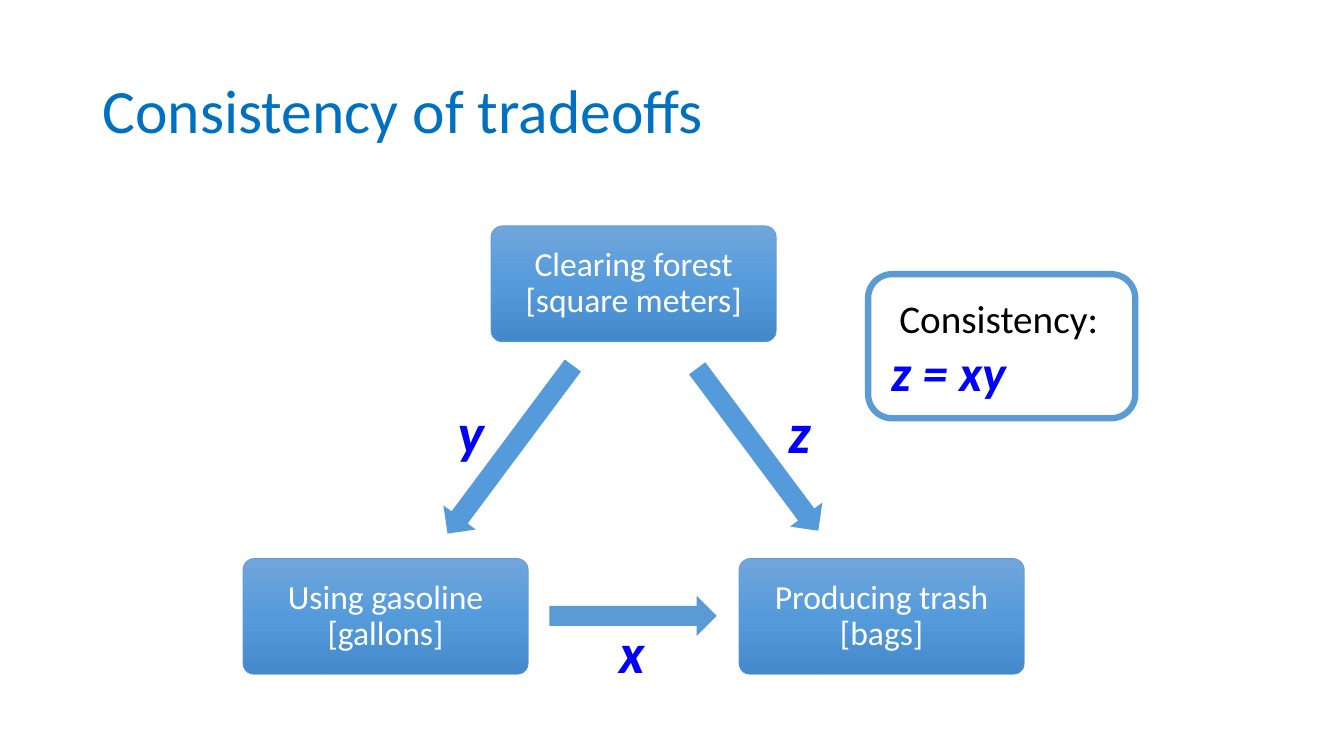
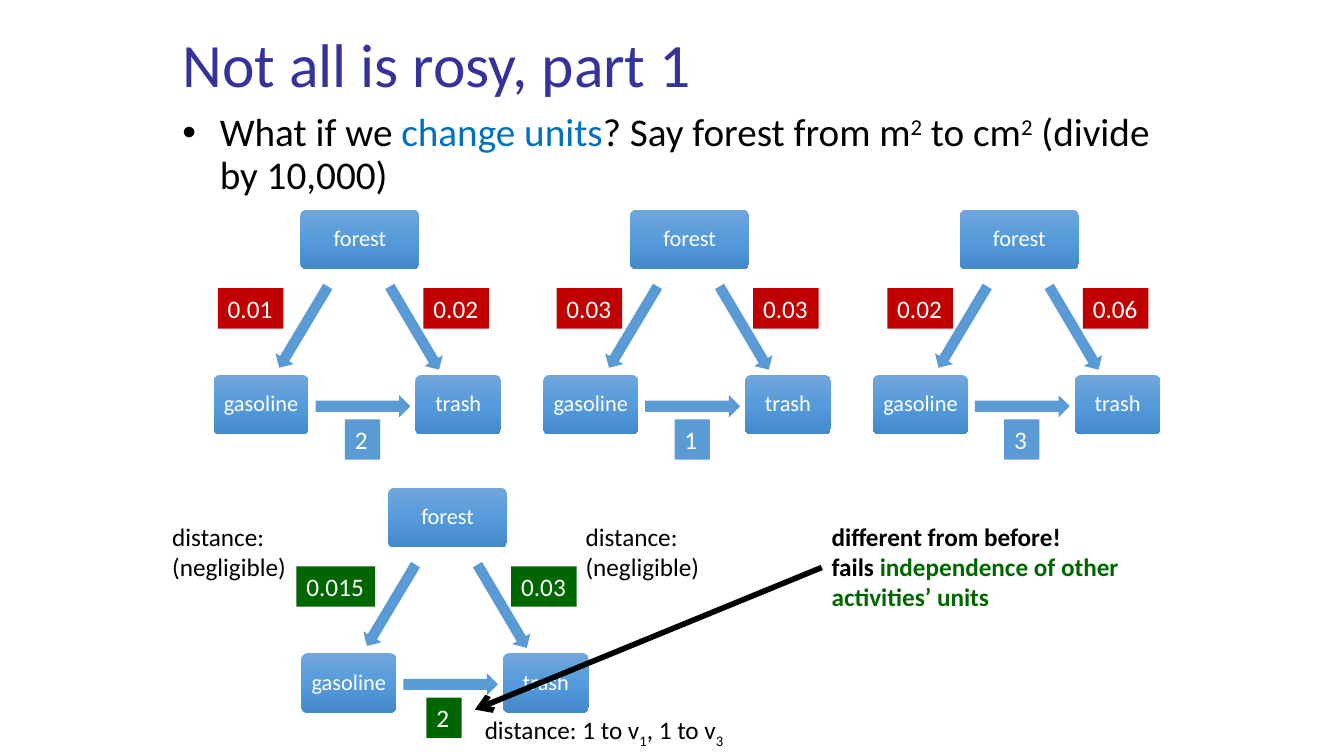
from lxml import etree
from pptx import Presentation
from pptx.dml.color import RGBColor
from pptx.enum.shapes import MSO_CONNECTOR, MSO_SHAPE
from pptx.enum.text import MSO_ANCHOR, MSO_AUTO_SIZE, PP_ALIGN
from pptx.oxml import parse_xml
from pptx.oxml.ns import nsdecls, qn
from pptx.util import Inches, Pt

FONT = "Calibri"
COLORS = {
    "white": "FFFFFF", "black": "000000", "accent": "5B9BD5",
    "title": "0070C0", "indigo": "333399", "variable": "0000FF",
    "red": "C00000", "green": "006600", "diagonal": "559BDB",
}
NODE_STOPS = [(0, "71A6DB"), (50, "559BDB"), (100, "448ACA")]
ACTIVITIES = ("forest", "gasoline", "trash")

# Triangle geometry, relative to its top left corner.
# Nodes and labels: left, top, width, height; arrows add an angle.
LARGE = {
    "size": 24, "inset": 0.15, "line": 0.5, "diagonal": "diagonal",
    "nodes": {"forest": (2.46, 0, 2.83, 1.15),
              "gasoline": (0, 3.3, 2.83, 1.15),
              "trash": (4.92, 3.3, 2.83, 1.15)},
    "arrows": {"y": (1.61, 2.02, 2.08, 0.4, 126.7),
               "z": (4.1, 2.02, 2.01, 0.4, 53.3),
               "x": (3.04, 3.67, 1.66, 0.4, 0)},
    "labels": {"y": (2.03, 1.65, 0.46, 0.77),
               "z": (5.31, 1.65, 0.42, 0.77),
               "x": (3.63, 3.84, 0.46, 0.77)},
}
SMALL = {
    "size": 16, "inset": 0.08, "line": 0, "diagonal": "accent",
    "nodes": {"forest": (0.86, 0, 1.18, 0.59),
              "gasoline": (0, 1.64, 0.94, 0.59),
              "trash": (2, 1.64, 0.85, 0.59)},
    "arrows": {"y": (0.42, 1.06, 0.94, 0.21, 120.9),
               "z": (1.51, 1.07, 0.96, 0.21, 59.4),
               "x": (1.01, 1.84, 0.94, 0.22, 0)},
}


def rgb(name):
    return RGBColor.from_string(COLORS[name])


def inches(box):
    return [Inches(v) for v in box]


def shift(box, x, y):
    return (x + box[0], y + box[1], *box[2:])


def add_run(p, text, size, color, bold=False, italic=False, baseline=0):
    r = p.add_run()
    r.text = text
    r.font.name, r.font.size = FONT, Pt(size)
    r.font.bold, r.font.italic = bold, italic
    r.font.color.rgb = rgb(color)
    if baseline:
        r.font._element.set("baseline", str(baseline * 1000))


def write(tf, paras, size, color, **style):
    """Each paragraph is a list of (text, changes of style) runs."""
    for i, runs in enumerate(paras):
        p = tf.paragraphs[0] if i == 0 else tf.add_paragraph()
        for text, changes in runs:
            add_run(p, text, **{"size": size, "color": color, **style, **changes})


def add_text(s, box, paras, size, color="black", fill=None, wrap=False,
             fit=True, inset=None, **style):
    sp = s.shapes.add_textbox(*inches(box))
    tf = sp.text_frame
    tf.word_wrap = wrap
    tf.auto_size = MSO_AUTO_SIZE.SHAPE_TO_FIT_TEXT if fit else MSO_AUTO_SIZE.NONE
    if inset is not None:
        set_insets(tf, inset)
    if fill:
        sp.fill.solid()
        sp.fill.fore_color.rgb = rgb(fill)
    write(tf, paras, size, color, **style)
    return tf


def set_insets(tf, inset):
    tf.margin_left = tf.margin_right = Inches(inset)
    tf.margin_top = tf.margin_bottom = Inches(inset)


def add_title(s, box, text, color, inset=None):
    tf = add_text(s, box, [[(text, {})]], 44, color, wrap=True, fit=False, inset=inset)
    tf.vertical_anchor = MSO_ANCHOR.MIDDLE
    tf.paragraphs[0].line_spacing = 0.9


def add_node(s, box, text, geo):
    sp = s.shapes.add_shape(MSO_SHAPE.ROUNDED_RECTANGLE, *inches(box))
    sp.shadow.inherit = False
    sp.adjustments[0] = 0.1
    # Three-stop vertical gradient
    stops = "".join(f'<a:gs pos="{pos * 1000}"><a:srgbClr val="{c}"/></a:gs>'
                    for pos, c in NODE_STOPS)
    grad = parse_xml(f'<a:gradFill {nsdecls("a")} rotWithShape="1"><a:gsLst>{stops}'
                     '</a:gsLst><a:lin ang="5400000" scaled="0"/></a:gradFill>')
    sp._element.spPr.find(qn("a:prstGeom")).addnext(grad)
    if geo["line"]:
        sp.line.color.rgb = rgb("accent")
        sp.line.width = Pt(geo["line"])
    else:
        sp.line.fill.background()
    tf = sp.text_frame
    tf.word_wrap = True
    tf.vertical_anchor = MSO_ANCHOR.MIDDLE
    set_insets(tf, geo["inset"])
    write(tf, [[(text, {})]], geo["size"], "white")
    tf.paragraphs[0].alignment = PP_ALIGN.CENTER
    tf.paragraphs[0].line_spacing = 0.9


def add_block_arrow(s, box, angle, color):
    sp = s.shapes.add_shape(MSO_SHAPE.RIGHT_ARROW, *inches(box))
    sp.shadow.inherit = False
    sp.rotation = angle
    sp.fill.solid()
    sp.fill.fore_color.rgb = rgb(color)
    sp.line.fill.background()


def add_triangle(s, x, y, geo, names):
    for key, box in geo["nodes"].items():
        add_node(s, shift(box, x, y), names[key], geo)
    for *box, angle in geo["arrows"].values():
        color = geo["diagonal"] if angle else "accent"
        add_block_arrow(s, shift(box, x, y), angle, color)


def add_tagged_triangle(s, x, y, ratios, tag_lefts, side_fill, base_fill):
    """Small triangle with a value on each side: y, z, then x."""
    add_triangle(s, x, y, SMALL, {name: name for name in ACTIVITIES})
    tops, fills = (0.78, 0.78, 2.08), (side_fill, side_fill, base_fill)
    for value, left, top, fill in zip(ratios, tag_lefts, tops, fills):
        width = 0.22 + 0.13 * len(value) - (0.09 if "." in value else 0)
        add_text(s, (x + left, y + top, width, 0.4), [[(value, {})]], 18,
                 "white", fill=fill)


def add_consistency_box(s, x, y):
    tf = add_text(s, (x + 0.13, y + 0.15, 2.33, 1.18),
                  [[("Consistency:", {})],
                   [("z = xy", {"size": 36, "color": "variable",
                                "bold": True, "italic": True})]], 28)
    tf.paragraphs[0].alignment = PP_ALIGN.CENTER
    frame = s.shapes.add_shape(MSO_SHAPE.ROUNDED_RECTANGLE,
                               *inches((x, y, 2.65, 1.43)))
    frame.shadow.inherit = False
    frame.fill.background()
    frame.line.color.rgb = rgb("accent")
    frame.line.width = Pt(4.5)


def add_bullet(s, box, runs):
    tf = add_text(s, box, [runs], 28, wrap=True, fit=False, inset=0)
    p = tf.paragraphs[0]
    p.line_spacing = 0.9
    pPr = p._p.get_or_add_pPr()
    pPr.set("marL", str(Inches(0.37)))
    pPr.set("indent", str(-Inches(0.37)))
    etree.SubElement(pPr, qn("a:buFont")).set("typeface", "Arial")
    etree.SubElement(pPr, qn("a:buChar")).set("char", "•")


def add_pointer(s, start, end):
    line = s.shapes.add_connector(MSO_CONNECTOR.STRAIGHT, *inches(start + end))
    line.line.color.rgb = rgb("black")
    line.line.width = Pt(4)
    ln = line.line._get_or_add_ln()
    etree.SubElement(ln, qn("a:tailEnd")).set("type", "arrow")
    etree.SubElement(line._element.spPr, qn("a:effectLst"))


def build_consistency(s):
    add_title(s, (0.92, 0.4, 11.5, 1.45), "Consistency of tradeoffs", "title")
    x, y = 2.41, 2.24
    add_triangle(s, x, y, LARGE, {
        "forest": "Clearing forest [square meters]",
        "gasoline": "Using gasoline [gallons]",
        "trash": "Producing trash [bags]"})
    for name, box in LARGE["labels"].items():
        add_text(s, shift(box, x, y), [[(name, {})]], 40, "variable",
                 bold=True, italic=True)
    add_consistency_box(s, 8.61, 2.72)


def build_change_of_units(s):
    add_title(s, (1.81, 0.17, 10, 0.99), "Not all is rosy, part 1", "indigo", inset=0)
    add_bullet(s, (1.81, 1.12, 9.61, 5.42), [
        ("What if we ", {}), ("change units", {"color": "title"}),
        ("? Say forest from m", {}), ("2", {"baseline": 30}),
        (" to cm", {}), ("2", {"baseline": 30}),
        (" (divide by 10,000)", {})])

    # Three voters
    voters = [(("0.01", "0.02", "2"), 0.04),
              (("0.03", "0.03", "1"), 0.13),
              (("0.02", "0.06", "3"), 0.14)]
    for i, (ratios, left) in enumerate(voters):
        add_tagged_triangle(s, 2.12 + 3.27 * i, 2.08, ratios,
                            (left, 2.08, 1.3), "red", "accent")

    # Aggregate and its distances
    add_tagged_triangle(s, 2.99, 4.84, ("0.015", "0.03", "2"),
                        (-0.05, 2.08, 1.24), "green", "green")
    for left in (1.61, 5.71):
        add_text(s, (left, 5.12, 1.34, 0.71),
                 [[("distance:", {})], [("(negligible)", {})]], 18)
    add_text(s, (4.71, 7.04, 5.34, 0.61), [[
        ("distance: 1 to v", {}), ("1", {"baseline": -25}),
        (", 1 to v", {}), ("3", {"baseline": -25})]], 18, wrap=True)

    # Conclusion
    add_text(s, (8.15, 5.12, 3.27, 1.01), [
        [("different from before!", {})],
        [("fails ", {}),
         ("independence of other activities’ units", {"color": "green"})],
    ], 18, wrap=True, bold=True)
    add_pointer(s, (8.15, 5.63), (4.71, 7.04))


def main():
    prs = Presentation()
    prs.slide_width, prs.slide_height = Inches(13.33), Inches(7.5)
    for build in (build_consistency, build_change_of_units):
        build(prs.slides.add_slide(prs.slide_layouts[6]))
    prs.save("out.pptx")


if __name__ == "__main__":
    main()
